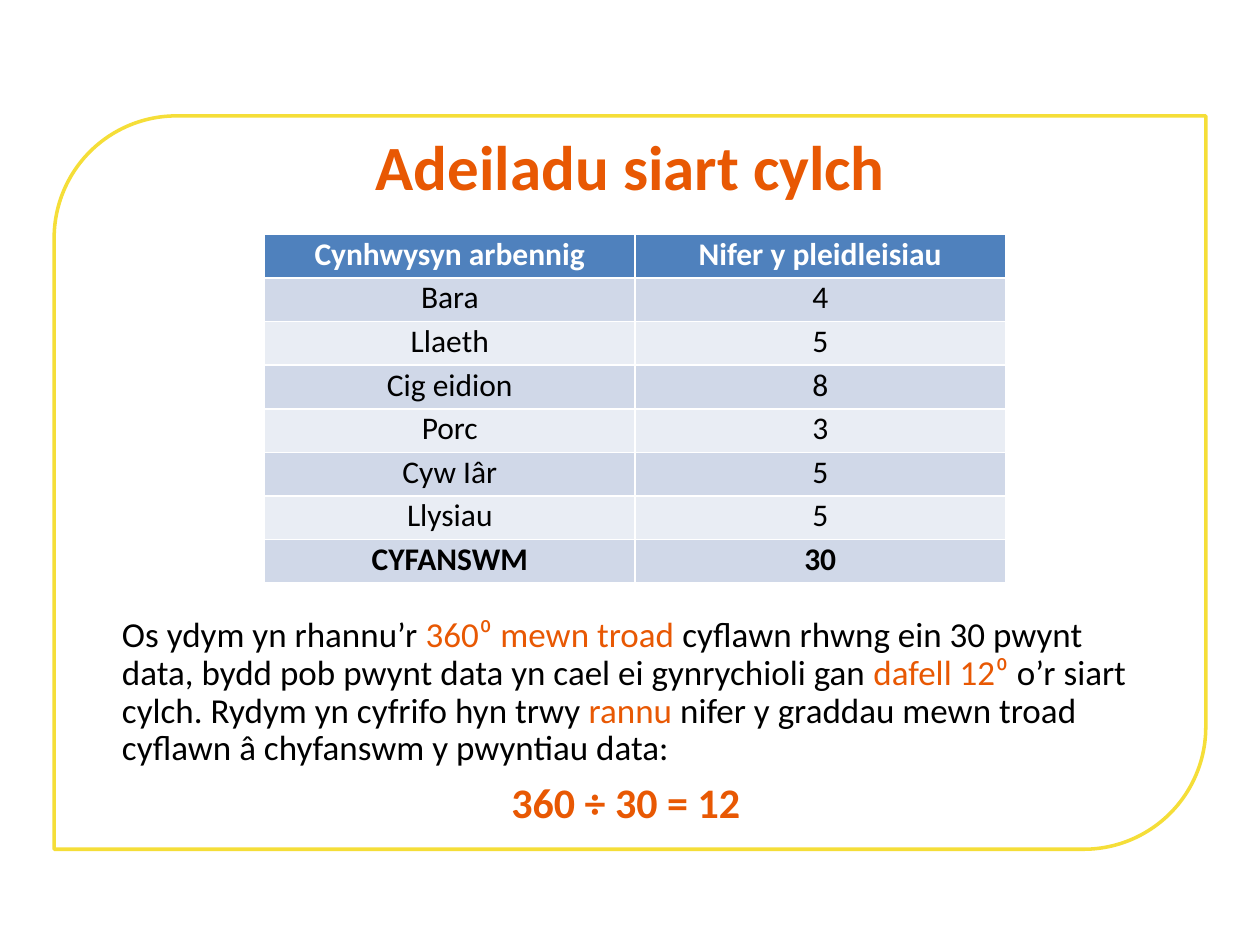
from pptx import Presentation
from pptx.dml.color import RGBColor
from pptx.enum.shapes import MSO_SHAPE
from pptx.enum.text import MSO_ANCHOR, PP_ALIGN
from pptx.util import Inches, Pt

FRAME_SHAPE = MSO_SHAPE.ROUND_2_DIAG_RECTANGLE
MIDDLE, TOP = MSO_ANCHOR.MIDDLE, MSO_ANCHOR.TOP
LEFT, CENTER = PP_ALIGN.LEFT, PP_ALIGN.CENTER

FONT = "Calibri"
ORANGE = RGBColor(0xE8, 0x58, 0x03)
YELLOW = RGBColor(0xF5, 0xDE, 0x38)
BLACK = RGBColor(0, 0, 0)
WHITE = RGBColor(0xFF, 0xFF, 0xFF)
HEADER_BLUE = RGBColor(0x4F, 0x81, 0xBD)
BANDS = (RGBColor(0xD0, 0xD8, 0xE8), RGBColor(0xE9, 0xED, 0xF4))

TITLE = "Adeiladu siart cylch"
VOTES = [
    ("Cynhwysyn arbennig", "Nifer y pleidleisiau"),
    ("Bara", "4"),
    ("Llaeth", "5"),
    ("Cig eidion", "8"),
    ("Porc", "3"),
    ("Cyw Iâr", "5"),
    ("Llysiau", "5"),
    ("CYFANSWM", "30"),
]
EXPLANATION = [
    ("Os ydym yn rhannu’r ", BLACK),
    ("360⁰ mewn troad ", ORANGE),
    ("cyflawn rhwng ein 30 pwynt data, bydd pob pwynt data yn cael ei gynrychioli gan ", BLACK),
    ("dafell 12⁰ ", ORANGE),
    ("o’r siart cylch. Rydym yn cyfrifo hyn trwy ", BLACK),
    ("rannu", ORANGE),
    (" nifer y graddau mewn troad cyflawn â chyfanswm y pwyntiau data:", BLACK),
]
CALCULATION = [("360 ÷ 30 = 12 ", ORANGE)]

FRAME_BOX = (0.43, 0.92, 9.14, 5.82)
TITLE_BOX = (1.46, 0.92, 7.09, 0.79)
TABLE_BOX = (2.1, 1.86, 5.88, 2.77)
BODY_BOX = (0.87, 4.85, 8.27, 1.65)


def inches(box):
    return [Inches(length) for length in box]


def write(paragraph, runs, size, bold=False, align=CENTER, line=1.0, before=0):
    paragraph.alignment = align
    paragraph.line_spacing = line
    paragraph.space_before = Pt(before)
    for words, color in runs:
        run = paragraph.add_run()
        run.text = words
        run.font.name = FONT
        run.font.size = Pt(size)
        run.font.bold = bold
        run.font.color.rgb = color


def add_frame(slide):
    frame = slide.shapes.add_shape(FRAME_SHAPE, *inches(FRAME_BOX))
    frame.shadow.inherit = False
    frame.fill.solid()
    frame.fill.fore_color.rgb = WHITE
    frame.line.color.rgb = YELLOW
    frame.line.width = Pt(2)
    slide.shapes._spTree.insert(2, frame._element)


def add_title(slide):
    title = slide.shapes.title
    title.left, title.top, title.width, title.height = inches(TITLE_BOX)
    title.text_frame.vertical_anchor = MIDDLE
    write(title.text_frame.paragraphs[0], [(TITLE, ORANGE)], 36, bold=True)


def add_votes(slide):
    last = len(VOTES) - 1
    table = slide.shapes.add_table(len(VOTES), len(VOTES[0]), *inches(TABLE_BOX)).table
    for r, values in enumerate(VOTES):
        is_header = r == 0
        for c, value in enumerate(values):
            cell = table.cell(r, c)
            cell.fill.solid()
            cell.fill.fore_color.rgb = HEADER_BLUE if is_header else BANDS[(r - 1) % 2]
            write(cell.text_frame.paragraphs[0], [(value, WHITE if is_header else BLACK)],
                  18, bold=r in (0, last), line=0.8)


def add_body(slide):
    body = slide.shapes.add_textbox(*inches(BODY_BOX)).text_frame
    body.word_wrap = True
    body.vertical_anchor = TOP
    write(body.paragraphs[0], EXPLANATION, 20, align=LEFT, line=0.9)
    write(body.add_paragraph(), CALCULATION, 24, bold=True, line=0.9, before=8)


def main():
    deck = Presentation()
    deck.slide_width, deck.slide_height = Inches(10), Inches(7.5)
    slide = deck.slides.add_slide(deck.slide_layouts[5])
    add_frame(slide)
    add_title(slide)
    add_body(slide)
    add_votes(slide)
    deck.save("out.pptx")


if __name__ == "__main__":
    main()
